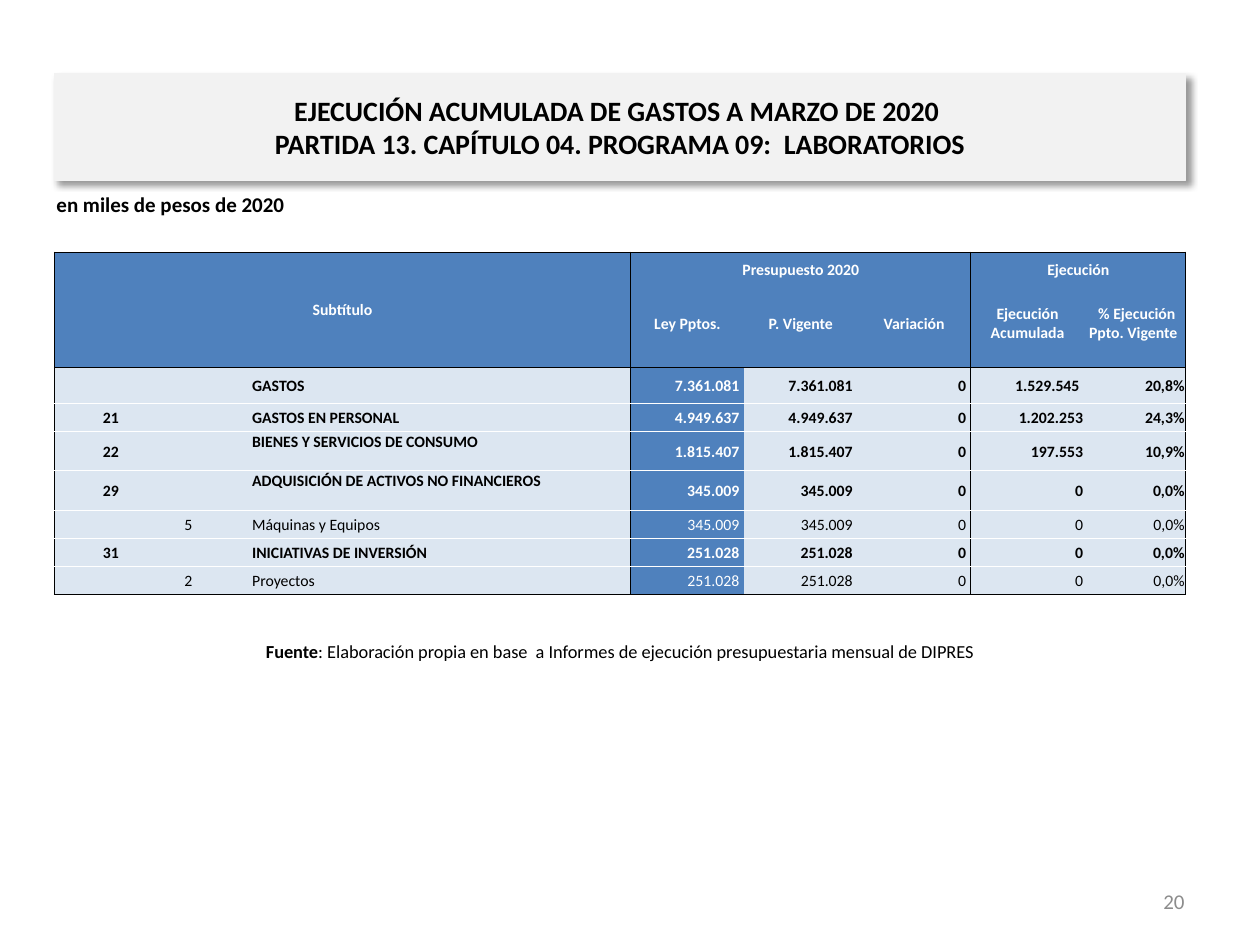
import pptx
import pptx.util
import pptx.dml.color
import pptx.enum.shapes
import pptx.enum.text
from pptx.oxml import parse_xml
from pptx.oxml.ns import nsdecls

Pt = pptx.util.Pt
RGBColor = pptx.dml.color.RGBColor
ALIGN = pptx.enum.text.PP_ALIGN
ANCHOR = pptx.enum.text.MSO_ANCHOR

BLACK = RGBColor(0x00, 0x00, 0x00)
WHITE = RGBColor(0xFF, 0xFF, 0xFF)
BLUE = RGBColor(0x4F, 0x81, 0xBD)
PALE_BLUE = RGBColor(0xDC, 0xE6, 0xF1)
PALE_GREY = RGBColor(0xF2, 0xF2, 0xF2)
GREY = RGBColor(0x8C, 0x8C, 0x8C)
FONT = "Calibri"

TITLE = ("EJECUCIÓN ACUMULADA DE GASTOS A MARZO DE 2020 \v"
         "PARTIDA 13. CAPÍTULO 04. PROGRAMA 09:  LABORATORIOS")
UNITS = "en miles de pesos de 2020"
SOURCE = [("Fuente", True),
          (": Elaboración propia en base  a Informes de ejecución presupuestaria mensual de DIPRES", False)]
PAGE_NUMBER = "20"

HEADER = [
    ["Subtítulo", "", "", "", "Presupuesto 2020", "", "", "Ejecución", ""],
    ["", "", "", "", "Ley Pptos.", "P. Vigente", "Variación",
     "Ejecución Acumulada", " % Ejecución Ppto. Vigente "],
]
BODY = [
    ["", "", "", "GASTOS", "7.361.081 ", "7.361.081 ", "0 ", "1.529.545 ", "20,8%"],
    ["21", "", "", "GASTOS EN PERSONAL", "4.949.637 ", "4.949.637 ", "0 ", "1.202.253", "24,3%"],
    ["22", "", "", "BIENES Y SERVICIOS DE CONSUMO", "1.815.407 ", "1.815.407 ", "0 ", "197.553", "10,9%"],
    ["29", "", "", "ADQUISICIÓN DE ACTIVOS NO FINANCIEROS", "345.009 ", "345.009 ", "0 ", "0", "0,0%"],
    ["", "5", "", "Máquinas y Equipos", "345.009 ", "345.009 ", "0 ", "0", "0,0%"],
    ["31", "", "", "INICIATIVAS DE INVERSIÓN", "251.028 ", "251.028 ", "0 ", "0", "0,0%"],
    ["", "2", "", "Proyectos", "251.028 ", "251.028 ", "0 ", "0", "0,0%"],
]
ROWS = HEADER + BODY
MERGES = [(0, 0, 1, 3), (0, 4, 0, 6), (0, 7, 0, 8)]
COLUMN_WIDTHS = [64.8, 23.8, 23.8, 217, 64.8, 64.8, 64.8, 64.8, 58]
ROW_HEIGHTS = [15.8, 49.9, 21, 16, 22.4, 22.6, 16, 16, 16]
LABEL_COLUMN, LAW_COLUMN = 3, 4
TOP_LABELS = {"22", "29"}
BLACK_COLUMN_EDGES = {0, 4, 7, 9}
BLACK_ROW_EDGES = {0, 2, 9}
LEFT, WIDTH = 31, 646.6


def style_run(run, size, color, bold):
    run.font.name = FONT
    run.font.size = Pt(size)
    run.font.bold = bold
    run.font.color.rgb = color


def add_text(slide, box, pieces, size, color=BLACK, align=ALIGN.LEFT, anchor=ANCHOR.MIDDLE):
    frame = slide.shapes.add_textbox(*map(Pt, box)).text_frame
    frame.word_wrap = True
    frame.vertical_anchor = anchor
    paragraph = frame.paragraphs[0]
    paragraph.alignment = align
    for text, bold in pieces:
        run = paragraph.add_run()
        run.text = text
        style_run(run, size, color, bold)


def add_title(slide):
    shape = slide.shapes.add_shape(
        pptx.enum.shapes.MSO_SHAPE.RECTANGLE, Pt(LEFT), Pt(41.8), Pt(WIDTH), Pt(61.2))
    shape.fill.solid()
    shape.fill.fore_color.rgb = PALE_GREY
    shape.line.color.rgb = PALE_GREY
    shape.line.width = Pt(0.75)
    shape._element.spPr.append(parse_xml(
        f'<a:effectLst {nsdecls("a")}><a:outerShdw blurRad="{Pt(4)}" dist="{Pt(3)}" '
        f'dir="2700000" algn="tl" rotWithShape="0"><a:srgbClr val="{BLACK}">'
        '<a:alpha val="40000"/></a:srgbClr></a:outerShdw></a:effectLst>'))
    frame = shape.text_frame
    frame.word_wrap = True
    frame.vertical_anchor = ANCHOR.MIDDLE
    paragraph = frame.paragraphs[0]
    paragraph.text = TITLE
    paragraph.alignment = ALIGN.CENTER
    for run in paragraph.runs:
        style_run(run, 16, BLACK, True)


def row_edge_color(edge):
    if edge in BLACK_ROW_EDGES:
        return BLACK
    return WHITE if edge > len(HEADER) else None


def column_edge_color(edge):
    return BLACK if edge in BLACK_COLUMN_EDGES else None


def set_borders(cell, row, column):
    bottom = row + (cell.span_height if cell.is_merge_origin else 1)
    right = column + (cell.span_width if cell.is_merge_origin else 1)
    borders = [("lnL", column_edge_color(column)), ("lnR", column_edge_color(right)),
               ("lnT", row_edge_color(row)), ("lnB", row_edge_color(bottom))]
    properties = cell._tc.get_or_add_tcPr()
    for position, (tag, color) in enumerate(borders):
        fill = f'<a:solidFill><a:srgbClr val="{color}"/></a:solidFill>' if color else "<a:noFill/>"
        properties.insert(position, parse_xml(
            f'<a:{tag} {nsdecls("a")} w="{Pt(0.5)}">{fill}</a:{tag}>'))


def cell_alignment(row, column):
    if row < len(HEADER) or column < LABEL_COLUMN:
        return ALIGN.CENTER
    return ALIGN.JUSTIFY if column == LABEL_COLUMN else ALIGN.RIGHT


def format_cell(cell, row, column):
    dark = row < len(HEADER) or column == LAW_COLUMN
    cell.margin_left = cell.margin_right = cell.margin_top = Pt(0.72)
    cell.margin_bottom = Pt(0)
    top = column == LABEL_COLUMN and ROWS[row][0] in TOP_LABELS
    cell.vertical_anchor = ANCHOR.TOP if top else ANCHOR.MIDDLE
    if row == 0 and column >= LAW_COLUMN:
        cell.vertical_anchor = ANCHOR.BOTTOM
    cell.fill.solid()
    cell.fill.fore_color.rgb = BLUE if dark else PALE_BLUE
    paragraph = cell.text_frame.paragraphs[0]
    paragraph.alignment = cell_alignment(row, column)
    if ROWS[row][column]:
        paragraph.text = ROWS[row][column]
        style_run(paragraph.runs[0], 9, WHITE if dark else BLACK, not ROWS[row][1])
    else:
        paragraph._p.append(parse_xml(f'<a:endParaRPr {nsdecls("a")} sz="900"/>'))
    set_borders(cell, row, column)


def add_budget_table(slide):
    table = slide.shapes.add_table(
        len(ROWS), len(COLUMN_WIDTHS), Pt(LEFT), Pt(144), Pt(WIDTH), Pt(sum(ROW_HEIGHTS))).table
    table.first_row = table.horz_banding = False
    for column, width in zip(table.columns, COLUMN_WIDTHS):
        column.width = Pt(width)
    for row, height in zip(table.rows, ROW_HEIGHTS):
        row.height = Pt(height)
    for top, left, bottom, right in MERGES:
        table.cell(top, left).merge(table.cell(bottom, right))
    for row in range(len(ROWS)):
        for column in range(len(COLUMN_WIDTHS)):
            format_cell(table.cell(row, column), row, column)


def main():
    presentation = pptx.Presentation()
    presentation.slide_width, presentation.slide_height = Pt(720), Pt(540)
    slide = presentation.slides.add_slide(presentation.slide_layouts[6])
    add_text(slide, (LEFT, 360.7, WIDTH, 22.3), SOURCE, 10.5, align=ALIGN.CENTER)
    add_text(slide, (516.2, 500.4, 167.8, 28.8), [(PAGE_NUMBER, False)], 12, GREY, ALIGN.RIGHT)
    add_text(slide, (25.2, 105.8, 607.7, 22.3), [(UNITS, True)], 12, anchor=ANCHOR.TOP)
    add_title(slide)
    add_budget_table(slide)
    presentation.save("out.pptx")


if __name__ == "__main__":
    main()
